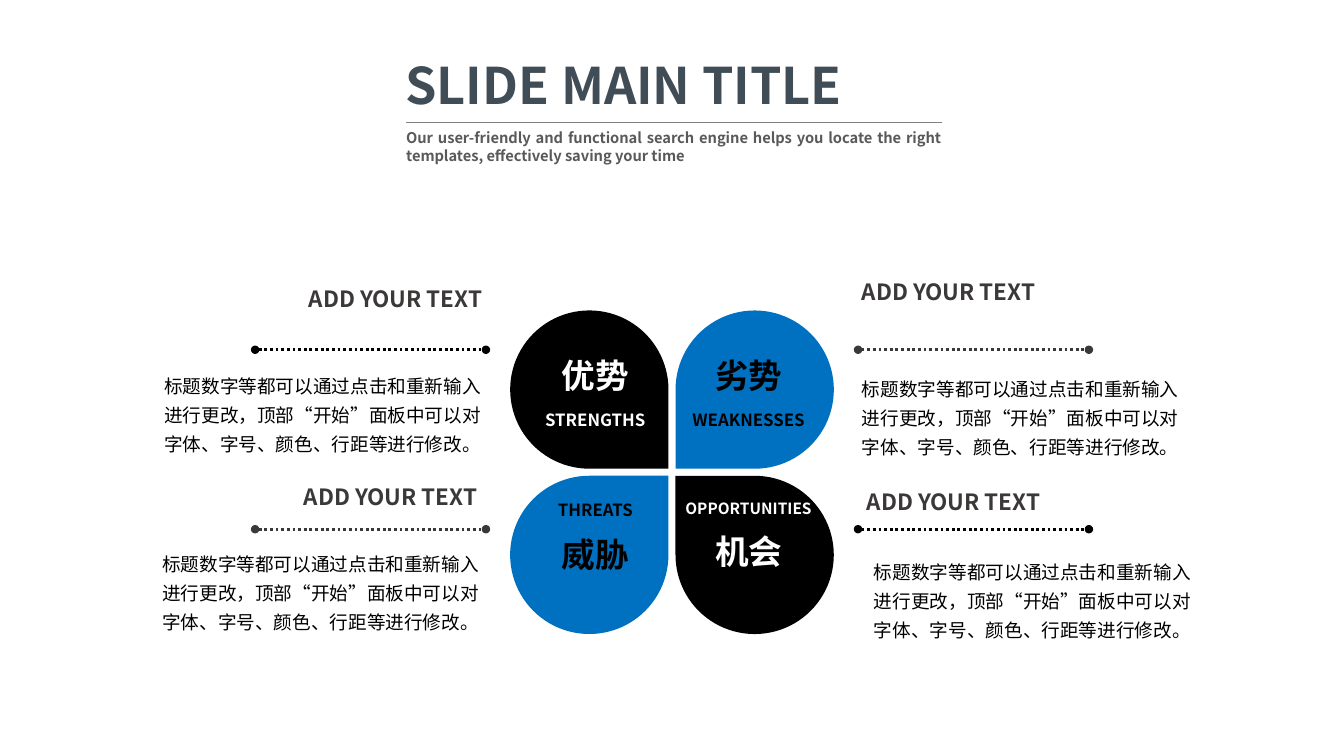
from collections import namedtuple

from lxml.etree import SubElement
from pptx import Presentation
from pptx.dml.color import RGBColor
from pptx.enum.dml import MSO_LINE_DASH_STYLE as Dash
from pptx.enum.shapes import MSO_CONNECTOR as Connector, MSO_SHAPE as Preset
from pptx.enum.text import MSO_ANCHOR as Anchor, MSO_AUTO_SIZE as AutoSize, PP_ALIGN as Align
from pptx.oxml.ns import qn
from pptx.util import Inches, Pt

FONT = "Noto Sans CJK SC"
BLACK, BLUE, WHITE, CHARCOAL = "000000", "0070C0", "FFFFFF", "3B3838"
HEADING = "ADD YOUR TEXT"
DETAIL = "标题数字等都可以通过点击和重新输入进行更改，顶部“开始”面板中可以对字体、字号、颜色、行距等进行修改。"

PETAL, PETAL_PITCH = 1.57, 1.64
FLOWER = (5.06, 3.08)
INWARD = 0.06
RULE_LENGTH = 2.29
RULE_COLUMNS, RULE_ROWS = (2.53, 8.51), (3.47, 5.25)

Box = namedtuple("Box", "left top width height")
Quadrant = namedtuple(
    "Quadrant",
    "column row turn fill ink rule name chinese name_size name_width name_drop chinese_drop "
    "heading_shift heading_width detail_shift")

QUADRANTS = [
    Quadrant(0, 0, 90, BLACK, WHITE, BLACK, "STRENGTHS", "优势", 12, 1.23, 0.94, 0.39,
             (0, -0.69), 2.35, (-1, 0.13)),
    Quadrant(1, 0, 180, BLUE, BLACK, CHARCOAL, "WEAKNESSES", "劣势", 12, 1.36, 0.94, 0.39,
             (-0.06, -0.76), 2.36, (-0.06, 0.16)),
    Quadrant(0, 1, 0, BLUE, BLACK, CHARCOAL, "THREATS", "威胁", 12, 0.98, 0.19, 0.53,
             (-0.02, -0.51), 2.32, (-1.02, 0.12)),
    Quadrant(1, 1, 270, BLACK, WHITE, BLACK, "OPPORTUNITIES", "机会", 11, 1.49, 0.18, 0.5,
             (-0.01, -0.46), 2.3, (0.06, 0.2)),
]


def color(code):
    """Turn a hex string into a colour."""
    return RGBColor.from_string(code)


def inches(box):
    """Turn the numbers of a box into lengths."""
    return [Inches(value) for value in box]


def write(holder, text, size, ink, bold=True, align=Align.LEFT, wrap=True, spacing=None):
    """Fill a text holder with one formatted paragraph."""
    frame = holder.text_frame
    frame.text = text
    paragraph = frame.paragraphs[0]
    frame_format = {"word_wrap": wrap, "auto_size": AutoSize.SHAPE_TO_FIT_TEXT,
                    "vertical_anchor": Anchor.TOP}
    paragraph_format = {"alignment": align, "line_spacing": spacing}
    run = paragraph.runs[0]
    font_format = {"name": FONT, "size": Pt(size), "bold": bold}
    for target, settings in ((frame, frame_format), (paragraph, paragraph_format),
                             (run.font, font_format)):
        for attribute, value in settings.items():
            setattr(target, attribute, value)
    run.font.color.rgb = color(ink)
    SubElement(run.font._element, qn("a:ea"), typeface=FONT)


def add_text(slide, box, *args, **options):
    """Add a text box and write in it."""
    write(slide.shapes.add_textbox(*inches(box)), *args, **options)


def add_rule(slide, left, top, length, ink, weight, dotted=False):
    """Draw a level rule, dotted with round ends if asked."""
    rule = slide.shapes.add_connector(
        Connector.STRAIGHT, *inches((left, top, left + length, top)))
    rule.line.color.rgb = color(ink)
    rule.line.width = Pt(weight)
    if dotted:
        rule.line.dash_style = Dash.ROUND_DOT
        outline = rule.line._get_or_add_ln()
        for end in ("a:headEnd", "a:tailEnd"):
            SubElement(outline, qn(end), type="oval")
    SubElement(rule._element.spPr, qn("a:effectLst"))


def add_header(slide, box):
    """Place the title, its engraved rule and the subtitle."""
    title = slide.shapes.title
    title_box = Box(box.left, box.top, box.width, 0.71)
    for side, length in zip(Box._fields, inches(title_box)):
        setattr(title, side, length)
    write(title, "SLIDE MAIN TITLE", 36, "404C56", align=Align.JUSTIFY)
    add_text(slide, Box(box.left + 0.01, box.top + 0.74, box.width - 0.02, 0.47),
             "Our user-friendly and functional search engine helps you locate the right "
             "templates, effectively saving your time",
             10.5, "595959", align=Align.JUSTIFY)
    for drop, ink in ((0.73, "808080"), (0.74, WHITE)):
        add_rule(slide, box.left + 0.11, box.top + drop, box.width - 0.22, ink, 1)


def add_petal(slide, box, quadrant):
    """Draw one petal with its Chinese and English names."""
    petal = slide.shapes.add_shape(Preset.TEAR, *inches(box))
    petal.rotation = quadrant.turn
    petal.shadow.inherit = False
    petal.fill.solid()
    petal.fill.fore_color.rgb = color(quadrant.fill)
    petal.line.fill.background()
    middle = box.left + box.width / 2 + (-INWARD if quadrant.column else INWARD)
    labels = ((quadrant.name, quadrant.name_size, quadrant.name_width, quadrant.name_drop, 0.3),
              (quadrant.chinese, 24, 0.88, quadrant.chinese_drop, 0.5))
    for text, size, width, drop, height in labels:
        add_text(slide, Box(middle - width / 2, box.top + drop, width, height),
                 text, size, quadrant.ink, align=Align.CENTER, wrap=False)


def add_callout(slide, left, top, quadrant):
    """Place a heading, dotted rule and detail around the rule's start."""
    add_rule(slide, left, top, RULE_LENGTH, quadrant.rule, 2, dotted=True)
    across, down = quadrant.heading_shift
    add_text(slide, Box(left + across, top + down, quadrant.heading_width, 0.37),
             HEADING, 16, CHARCOAL, align=Align.LEFT if quadrant.column else Align.RIGHT)
    across, down = quadrant.detail_shift
    add_text(slide, Box(left + across, top + down, 3.36, 0.98),
             DETAIL, 13.3, BLACK, bold=False, spacing=1.3)


def main():
    """Build the SWOT slide and save it."""
    deck = Presentation()
    deck.slide_width, deck.slide_height = Inches(13.33), Inches(7.5)
    slide = deck.slides.add_slide(deck.slide_layouts[5])
    add_header(slide, Box(3.92, 0.49, 5.53, 1.21))
    for quadrant in QUADRANTS:
        left = FLOWER[0] + quadrant.column * PETAL_PITCH
        top = FLOWER[1] + quadrant.row * PETAL_PITCH
        add_petal(slide, Box(left, top, PETAL, PETAL), quadrant)
        add_callout(slide, RULE_COLUMNS[quadrant.column], RULE_ROWS[quadrant.row], quadrant)
    deck.save("out.pptx")


if __name__ == "__main__":
    main()
